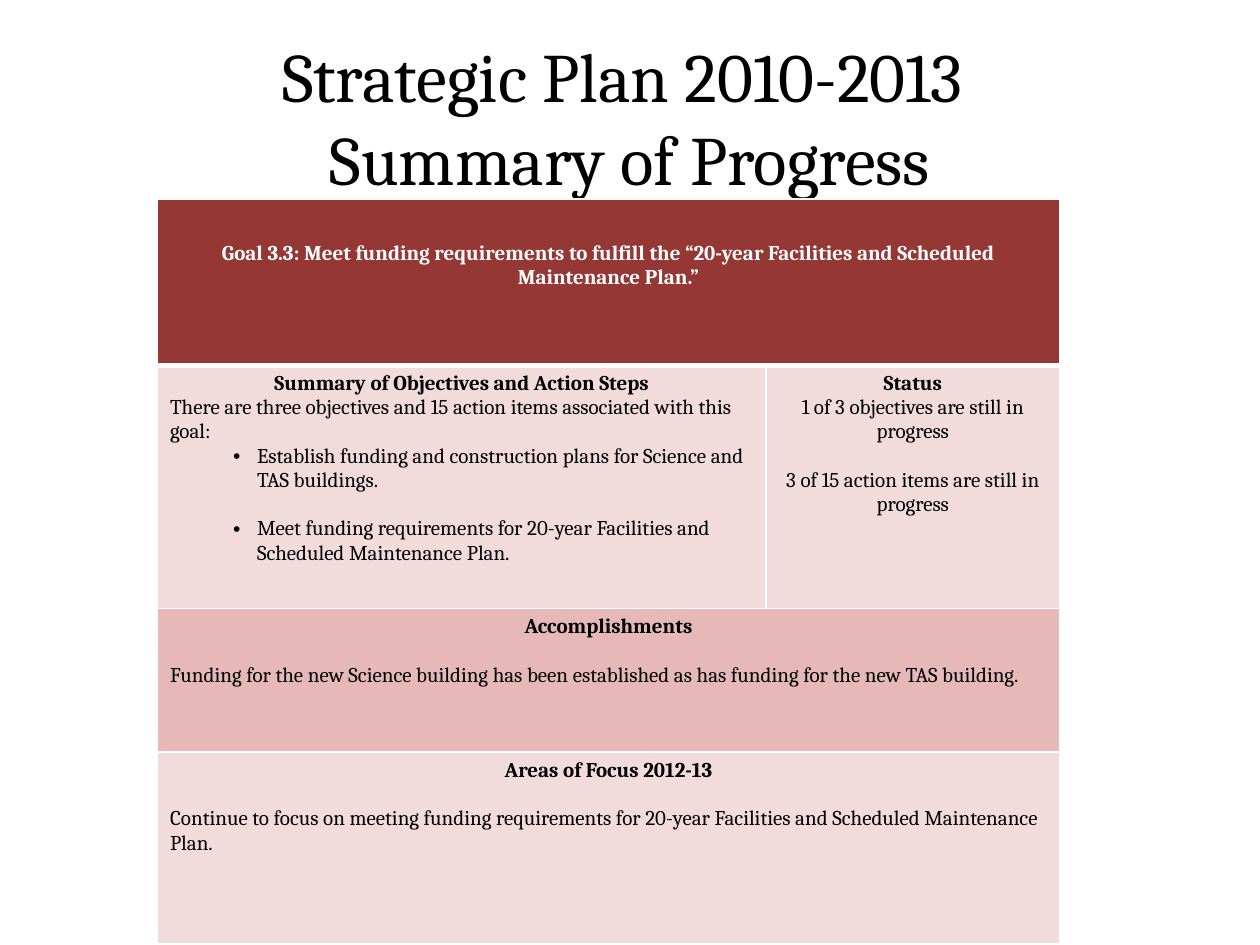
import dataclasses

import lxml.etree
import pptx
import pptx.dml.color
import pptx.enum.text
import pptx.oxml.ns
import pptx.util

Inches = pptx.util.Inches
Pt = pptx.util.Pt
Align = pptx.enum.text.PP_ALIGN
qn = pptx.oxml.ns.qn


@dataclasses.dataclass(frozen=True)
class Theme:
    """Hold the colours, font and type sizes of the slide."""
    font: str = "Cambria"
    title: float = 39.6
    body: float = 12
    gap: float = 14
    ink: str = "000000"
    white: str = "FFFFFF"
    dark: str = "953735"
    mid: str = "E6B9B8"
    pale: str = "F2DCDB"


THEME = Theme()


@dataclasses.dataclass(frozen=True)
class Para:
    """Describe one paragraph of a table cell."""
    text: str
    align: Align = Align.LEFT
    bold: bool = False
    gap: bool = False
    bullet: bool = False


def head(text):
    """Return a bold centred paragraph."""
    return Para(text, Align.CENTER, bold=True)


GOAL = [head("Goal 3.3: Meet funding requirements to fulfill the “20-year "
             "Facilities and Scheduled Maintenance Plan.”")]
STEPS = [
    head("Summary of Objectives and Action Steps"),
    Para("There are three objectives and 15 action items associated with "
         "this goal:"),
    Para("Establish funding and construction plans for Science and TAS "
         "buildings.", bullet=True),
    Para("Meet funding requirements for 20-year Facilities and Scheduled "
         "Maintenance Plan.", gap=True, bullet=True),
]
STATUS = [
    head("Status"),
    Para("1 of 3 objectives are still in progress", Align.CENTER),
    Para("3 of 15 action items are still in progress", Align.CENTER, gap=True),
]
DONE = [
    head("Accomplishments"),
    Para("Funding for the new Science building has been established as has "
         "funding for the new TAS building.", gap=True),
]
FOCUS = [
    head("Areas of Focus 2012-13"),
    Para("Continue to focus on meeting funding requirements for 20-year "
         "Facilities and Scheduled Maintenance Plan.", gap=True),
]
ROWS = [
    (1.32, THEME.dark, [GOAL]),
    (1.93, THEME.pale, [STEPS, STATUS]),
    (1.14, THEME.mid, [DONE]),
    (1.52, THEME.pale, [FOCUS]),
]
COLS = [4.83, 2.33]


def rgb(code):
    """Return the colour for a hex code."""
    return pptx.dml.color.RGBColor.from_string(code)


def style(para, size, color, bold=False):
    """Set the font of a paragraph."""
    font = para.font
    font.name, font.size, font.bold = THEME.font, Pt(size), bold
    font.color.rgb = rgb(color)


def bullet(para):
    """Give a paragraph a hanging bullet."""
    props = para._p.get_or_add_pPr()
    props.set("marL", str(Inches(0.69)))
    props.set("indent", str(Inches(-0.19)))
    lxml.etree.SubElement(props, qn("a:buFont")).set("typeface", "Arial")
    lxml.etree.SubElement(props, qn("a:buChar")).set("char", "•")


def border(cell, top, bottom):
    """Draw white lines round a cell."""
    props = cell._tc.get_or_add_tcPr()
    for side, width in zip("LRTB", (1, 1, top, bottom)):
        line = lxml.etree.SubElement(props, qn(f"a:ln{side}"))
        line.set("w", str(Pt(width)))
        fill = lxml.etree.SubElement(line, qn("a:solidFill"))
        lxml.etree.SubElement(fill, qn("a:srgbClr")).set("val", THEME.white)


def write(cell, paras, color):
    """Fill a cell with paragraphs."""
    frame = cell.text_frame
    for i, item in enumerate(paras):
        para = frame.add_paragraph() if i else frame.paragraphs[0]
        para.text = item.text
        para.alignment = item.align
        if item.gap:
            para.space_before = Pt(THEME.gap)
        if item.bullet:
            para.level = 1
            bullet(para)
        style(para, THEME.body, color, item.bold)


def title(slide, left, top, width, height):
    """Place the two-line title in its box."""
    box = slide.shapes.add_textbox(
        Inches(left), Inches(top), Inches(width), Inches(height))
    frame = box.text_frame
    frame.word_wrap = True
    frame.vertical_anchor = pptx.enum.text.MSO_ANCHOR.MIDDLE
    para = frame.paragraphs[0]
    para.text = "Strategic Plan 2010-2013 \vSummary of Progress"
    para.alignment = Align.CENTER
    style(para, THEME.title, THEME.ink)


def grid(slide, left, top):
    """Place the progress table with its corner at the given point."""
    high = sum(row[0] for row in ROWS)
    table = slide.shapes.add_table(
        len(ROWS), len(COLS), Inches(left), Inches(top),
        Inches(sum(COLS)), Inches(high)).table
    table.horz_banding = False
    for col, width in zip(table.columns, COLS):
        col.width = Inches(width)
    for r, (height, fill, cells) in enumerate(ROWS):
        table.rows[r].height = Inches(height)
        for c in range(len(COLS)):
            cell = table.cell(r, c)
            border(cell, 3 if r == 1 else 1, 3 if r == 0 else 1)
            cell.fill.solid()
            cell.fill.fore_color.rgb = rgb(fill)
        if len(cells) == 1:
            table.cell(r, 0).merge(table.cell(r, len(COLS) - 1))
        for c, paras in enumerate(cells):
            write(table.cell(r, c), paras, THEME.ink if r else THEME.white)
    table.cell(0, 0).margin_top = Inches(0.34)


def main():
    """Build and save the slide."""
    deck = pptx.Presentation()
    deck.slide_width, deck.slide_height = Inches(10), Inches(7.5)
    slide = deck.slides.add_slide(deck.slide_layouts[6])
    title(slide, 0.5, 0.3, 9, 1.25)
    grid(slide, 1.25, 1.58)
    deck.save("out.pptx")


if __name__ == "__main__":
    main()
